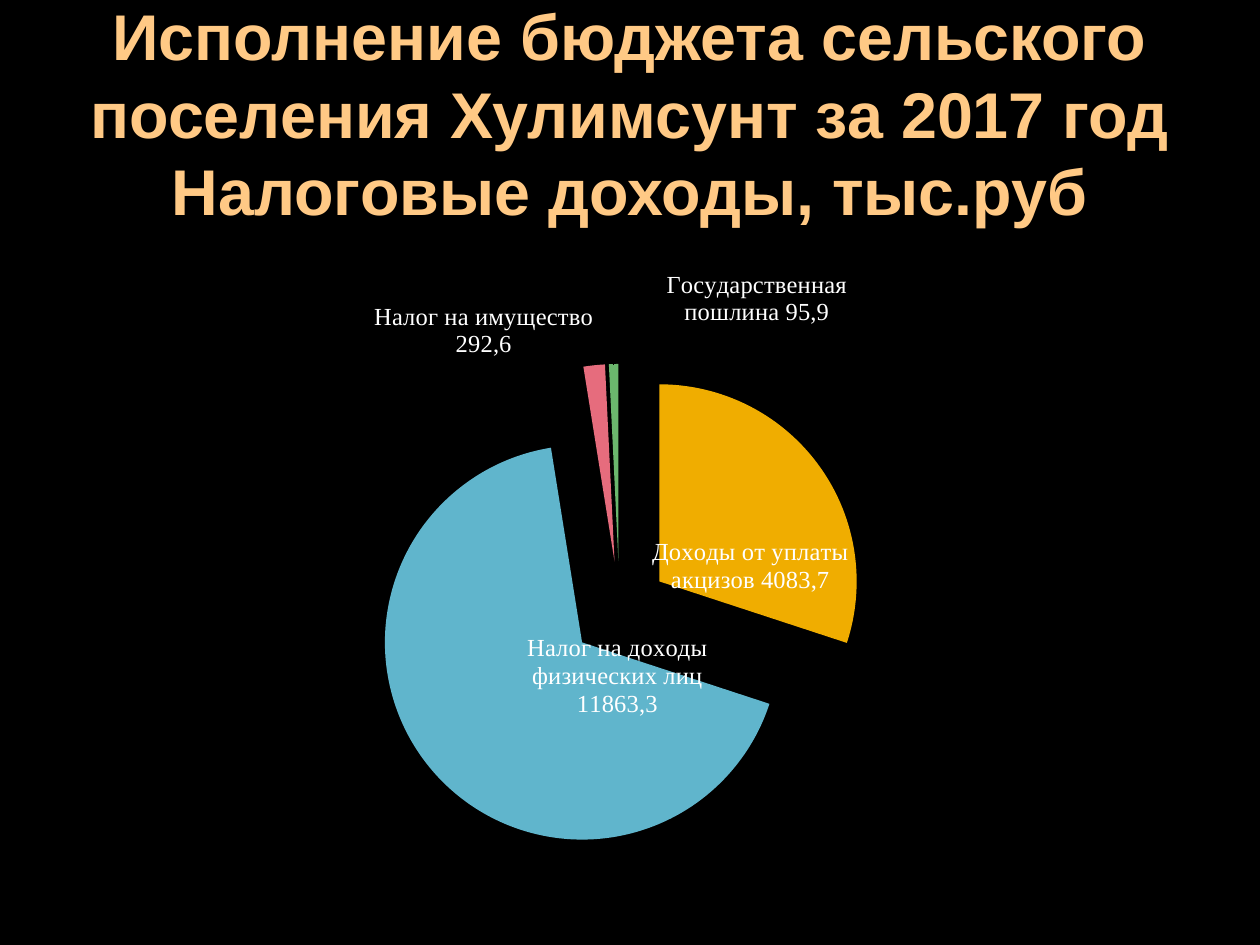
from lxml import etree
from pptx import Presentation
from pptx import util as u
from pptx.chart.data import CategoryChartData
from pptx.dml.color import RGBColor
from pptx.enum import chart as charts, text
from pptx.oxml.ns import qn


def paint(fill, colour):
    fill.solid()
    fill.fore_color.rgb = RGBColor.from_string(colour)


deck = Presentation()
deck.slide_width, deck.slide_height = u.Cm(25.4), u.Cm(19.05)
slide = deck.slides.add_slide(deck.slide_layouts[5])
paint(slide.background.fill, "000000")

# Heading
heading = slide.shapes.title
heading.left, heading.top = u.Cm(1.27), u.Cm(0.76)
heading.width, heading.height = u.Cm(22.86), u.Cm(4.57)
frame = heading.text_frame
frame.text = "Исполнение бюджета сельского поселения Хулимсунт за 2017 год\vНалоговые доходы, тыс.руб"
frame.word_wrap = True
frame.auto_size = text.MSO_AUTO_SIZE.NONE
frame.vertical_anchor = text.MSO_ANCHOR.MIDDLE
frame.margin_top, frame.margin_bottom = 0, u.Cm(1.56)
line = frame.paragraphs[0]
line.alignment = text.PP_ALIGN.CENTER
line.line_spacing = 1.0
line.font.name, line.font.size, line.font.bold = "Arial", u.Pt(36.9), True
paint(line.font.fill, "FFC985")

# Tax income: category, slice value, shown amount, colour, label place and shift
Place = charts.XL_LABEL_POSITION
incomes = [
    ("Доходы от уплаты акцизов", 5067, "4083,7", "F0AD00", Place.CENTER, 0.01, 0.07),
    ("Налог на доходы физических лиц", 11373, "11863,3", "60B5CC", Place.CENTER, 0.1, -0.05),
    ("Налог на имущество", 296, "292,6", "E66C7D", Place.OUTSIDE_END, 0, 0),
    ("Государственная пошлина", 130, "95,9", "6BB76D", Place.OUTSIDE_END, 0.13, -0.05),
]
data = CategoryChartData()
data.categories = [income[0] for income in incomes]
data.add_series("Series 1", [income[1] for income in incomes])
pie = slide.shapes.add_chart(
    charts.XL_CHART_TYPE.PIE, u.Cm(1.7), u.Cm(5.13), u.Cm(22.25), u.Cm(12.27), data
).chart
pie.has_legend = False
pie.has_title = False
pie.font.name, pie.font.size = "Times New Roman", u.Pt(18)
paint(pie.font.fill, "FFFFFF")


def set_layout(layout, **settings):
    manual = etree.SubElement(layout, qn("c:manualLayout"))
    for tag, value in settings.items():
        etree.SubElement(manual, qn(f"c:{tag}")).set("val", str(value))


# Plot area
plot_area = pie.plots[0]._element.getparent()
for old in plot_area.findall(qn("c:layout")):
    plot_area.remove(old)
plot_layout = etree.Element(qn("c:layout"))
plot_area.insert(0, plot_layout)
set_layout(plot_layout, layoutTarget="inner", xMode="edge", yMode="edge",
           x=0.06, y=0.18, w=0.85, h=0.81)

# Slices and their labels
pie.plots[0].vary_by_categories = True
slices = pie.plots[0].series[0]
explosion = etree.Element(qn("c:explosion"), val="25")
slices._element.find(qn("c:tx")).addnext(explosion)
labels = slices.data_labels
labels.show_value = labels.show_category_name = True
labels.font.name, labels.font.size = "Times New Roman", u.Pt(14)
paint(labels.font.fill, "FFFFFF")
for i, (category, _, amount, colour, place, dx, dy) in enumerate(incomes):
    point = slices.points[i]
    paint(point.format.fill, colour)
    label = point.data_label
    label.text_frame.text = f"{category} {amount}"
    label.position = place
    caption = label.text_frame.paragraphs[0].runs[0].font
    caption.name, caption.size = "Times New Roman", u.Pt(14)
    paint(caption.fill, "FFFFFF")
    shift = etree.Element(qn("c:layout"))
    label._dLbl.find(qn("c:idx")).addnext(shift)
    set_layout(shift, x=dx, y=dy)
    label._dLbl.find(qn("c:showCatName")).set("val", "1")

deck.save("out.pptx")
